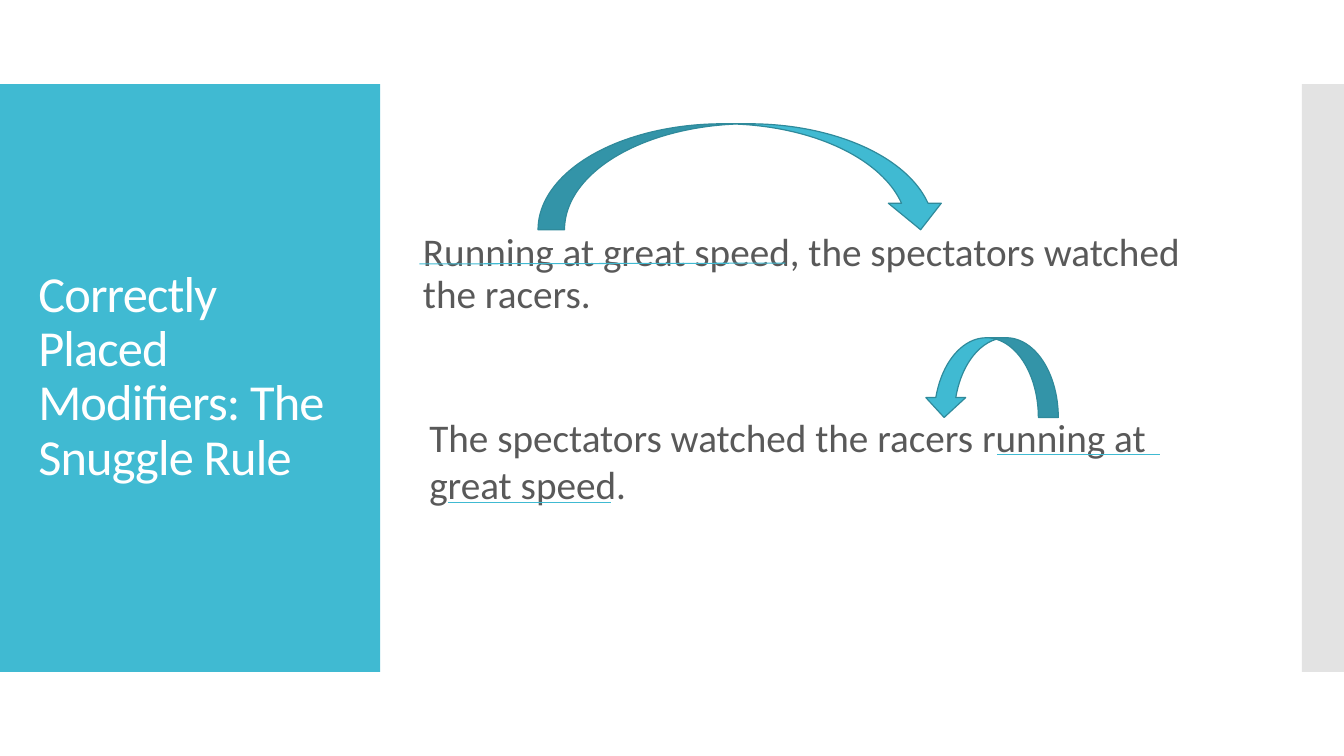
"""Build the slide on correctly placed modifiers."""
from pptx import Presentation
from pptx import util as u
from pptx.dml.color import RGBColor
from pptx.enum import shapes, text
from pptx.oxml.xmlchemy import OxmlElement

COLORS = {"teal": "40BAD2", "edge": "2F8A9B", "grey": "C8C8C8",
          "ink": "595959", "white": "FFFFFF"}
SHAPE = shapes.MSO_SHAPE
TITLE_FORMAT = {"size": u.Pt(36), "name": "Calibri", "bold": False}
SENTENCE_FORMAT = {"size": u.Pt(28), "name": "Calibri"}


def rgb(name):
    return RGBColor.from_string(COLORS[name])


def lengths(values):
    return [u.Cm(v) for v in values]


def add_block(s, kind, box, fill, edge=None, alpha=None, rotation=0):
    sp = s.shapes.add_shape(kind, *lengths(box))
    sp.shadow.inherit = False
    sp.rotation = rotation
    sp.fill.solid()
    sp.fill.fore_color.rgb = rgb(fill)
    if edge:
        sp.line.color.rgb = rgb(edge)
        sp.line.width = u.Pt(0.85)
    else:
        sp.line.fill.background()
    if alpha:
        node = OxmlElement("a:alpha")
        node.set("val", str(alpha * 1000))
        sp.fill._xPr.solidFill.srgbClr.append(node)


def add_underline(s, ends):
    line = s.shapes.add_connector(shapes.MSO_CONNECTOR.STRAIGHT, *lengths(ends))
    line.line.color.rgb = rgb("teal")
    line.line.width = u.Pt(0.75)
    line._element.spPr.append(OxmlElement("a:effectLst"))


def write(sp, words, color, font, frame, paragraph):
    tf = sp.text_frame
    p = tf.paragraphs[0]
    r = p.add_run()
    r.text = words
    r.font.color.rgb = rgb(color)
    for target, values in ((tf, frame), (p, paragraph), (r.font, font)):
        for key, value in values.items():
            setattr(target, key, value)
    return r


def add_title(s, words, box):
    sp = s.shapes.title
    s.shapes._spTree.append(sp._element)
    sp.left, sp.top, sp.width, sp.height = lengths(box)
    frame = {"word_wrap": True, "vertical_anchor": text.MSO_ANCHOR.MIDDLE,
             "auto_size": text.MSO_AUTO_SIZE.NONE}
    paragraph = {"alignment": text.PP_ALIGN.LEFT, "line_spacing": 0.9}
    r = write(sp, words, "white", TITLE_FORMAT, frame, paragraph)
    r.font._element.set("spc", "-60")


def add_sentence(s, words, box, spacing, inset):
    sp = s.shapes.add_textbox(*lengths(box))
    frame = {"word_wrap": True, "margin_top": u.Cm(inset)}
    write(sp, words, "ink", SENTENCE_FORMAT, frame, {"line_spacing": spacing})


def main():
    prs = Presentation()
    prs.slide_width, prs.slide_height = u.Cm(33.87), u.Cm(19.05)
    s = prs.slides.add_slide(prs.slide_layouts[5])
    add_block(s, SHAPE.RECTANGLE, (0, 2.12, 9.58, 14.81), "teal")
    add_block(s, SHAPE.RECTANGLE, (32.81, 2.12, 1.06, 14.81), "grey", alpha=50)
    add_title(s, "Correctly Placed Modifiers: The Snuggle Rule",
              (0.71, 3.12, 8.18, 12.78))
    add_sentence(s, "Running at great speed, the spectators watched the racers.",
                 (10.41, 5.77, 20.32, 3.12), 0.9, 0.08)
    add_sentence(s, "The spectators watched the racers running at great speed.",
                 (10.57, 10.29, 20.65, 3.43), 1.0, 0.13)
    for ends in ((10.57, 6.65, 19.79, 6.63), (25.12, 11.46, 29.24, 11.46),
                 (11.3, 12.65, 15.39, 12.65)):
        add_underline(s, ends)
    add_block(s, SHAPE.CURVED_DOWN_ARROW, (13.56, 3.12, 10.31, 2.67), "teal", "edge")
    add_block(s, SHAPE.CURVED_UP_ARROW, (23.29, 8.51, 3.38, 2.01), "teal", "edge",
              rotation=180)
    prs.save("out.pptx")


if __name__ == "__main__":
    main()
